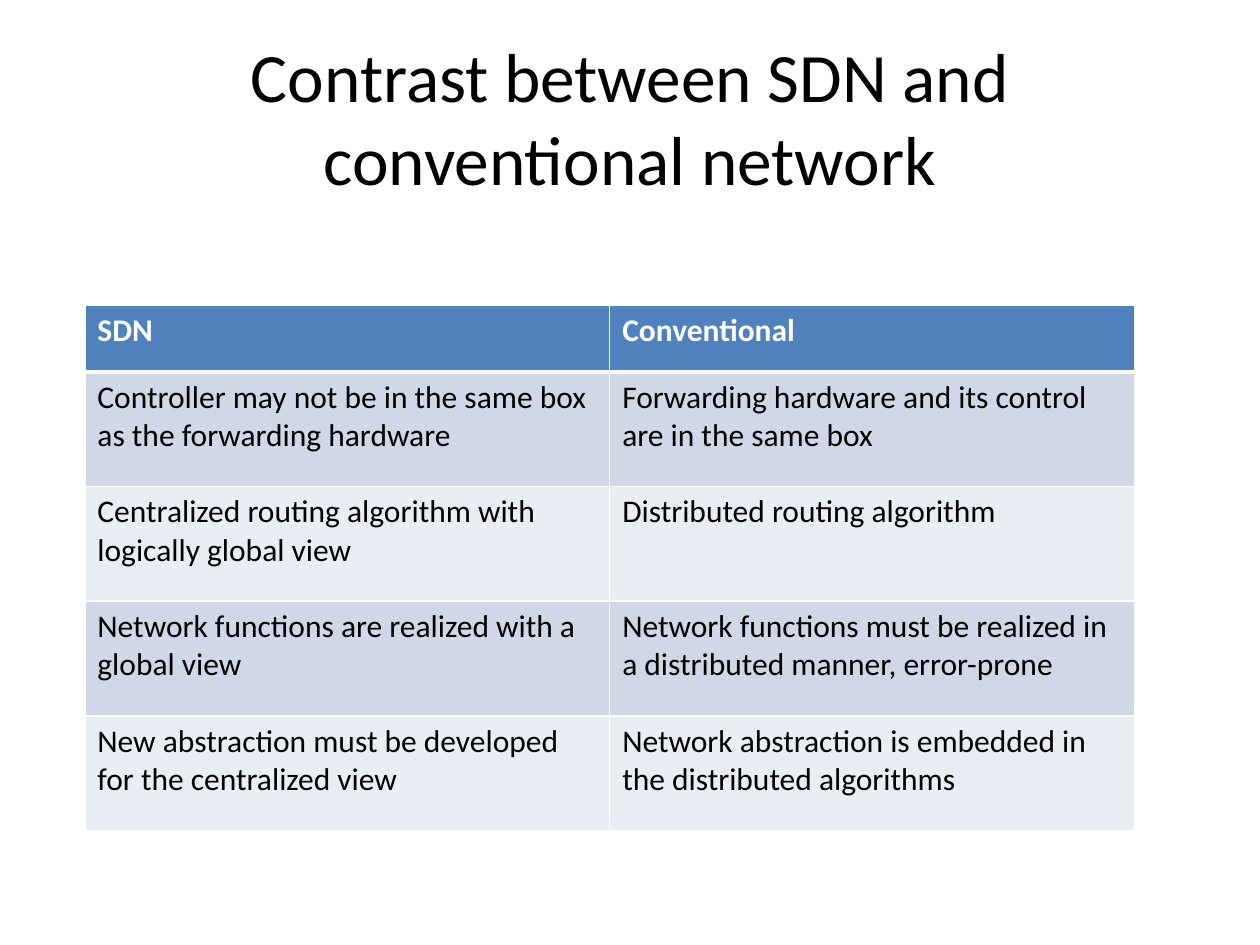
import pptx
import pptx.util
import pptx.dml.color
import pptx.enum.text
import pptx.oxml
import pptx.oxml.ns

Cm = pptx.util.Cm
Pt = pptx.util.Pt
RGB = pptx.dml.color.RGBColor.from_string

COLORS = {"text": "000000", "white": "FFFFFF", "header": "4F81BD",
          "band_dark": "D0D8E8", "band_light": "E9EDF4"}
ROWS = [
    ("SDN", "Conventional"),
    ("Controller may not be in the same box as the forwarding hardware",
     "Forwarding hardware and its control are in the same box"),
    ("Centralized routing algorithm with logically global view",
     "Distributed routing algorithm"),
    ("Network functions are realized with a global view",
     "Network functions must be realized in a distributed manner, error-prone"),
    ("New abstraction must be developed for the centralized view",
     "Network abstraction is embedded in the distributed algorithms"),
]


def style_text(paragraph, size, color, bold=False):
    for span in paragraph.runs:
        span.font.name = "Calibri"
        span.font.size = Pt(size)
        span.font.bold = bold
        span.font.color.rgb = RGB(color)


def add_border(cell, side, points):
    cell._tc.get_or_add_tcPr().append(pptx.oxml.parse_xml(
        f'<a:{side} {pptx.oxml.ns.nsdecls("a")} w="{Pt(points)}"><a:solidFill>'
        f'<a:srgbClr val="{COLORS["white"]}"/></a:solidFill></a:{side}>'))


deck = pptx.Presentation()
deck.slide_width = Cm(25.4)
deck.slide_height = Cm(19.05)
page = deck.slides.add_slide(deck.slide_layouts[5])

title = page.shapes.title
title.left, title.top, title.width, title.height = Cm(1.27), Cm(0.76), Cm(22.86), Cm(3.18)
title.text_frame.text = "Contrast between SDN and conventional network"
title.text_frame.auto_size = pptx.enum.text.MSO_AUTO_SIZE.NONE
title.text_frame.vertical_anchor = pptx.enum.text.MSO_ANCHOR.MIDDLE
title.text_frame.paragraphs[0].alignment = pptx.enum.text.PP_ALIGN.CENTER
style_text(title.text_frame.paragraphs[0], 39.6, COLORS["text"])

table = page.shapes.add_table(len(ROWS), 2, Cm(1.71), Cm(6.15), Cm(21.16), Cm(10.59)).table
for column in table.columns:
    column.width = Cm(10.58)

for row_index, texts in enumerate(ROWS):
    is_header = row_index == 0
    table.rows[row_index].height = Cm(1.35 if is_header else 2.31)
    band = "header" if is_header else ("band_light", "band_dark")[row_index % 2]
    for column_index, text in enumerate(texts):
        cell = table.cell(row_index, column_index)
        cell.text_frame.text = text
        style_text(cell.text_frame.paragraphs[0], 18,
                   COLORS["white" if is_header else "text"], is_header)
        add_border(cell, "lnL", 1)
        add_border(cell, "lnR", 1)
        add_border(cell, "lnT", 3 if row_index == 1 else 1)
        add_border(cell, "lnB", 3 if is_header else 1)
        cell.fill.solid()
        cell.fill.fore_color.rgb = RGB(COLORS[band])

deck.save("out.pptx")
